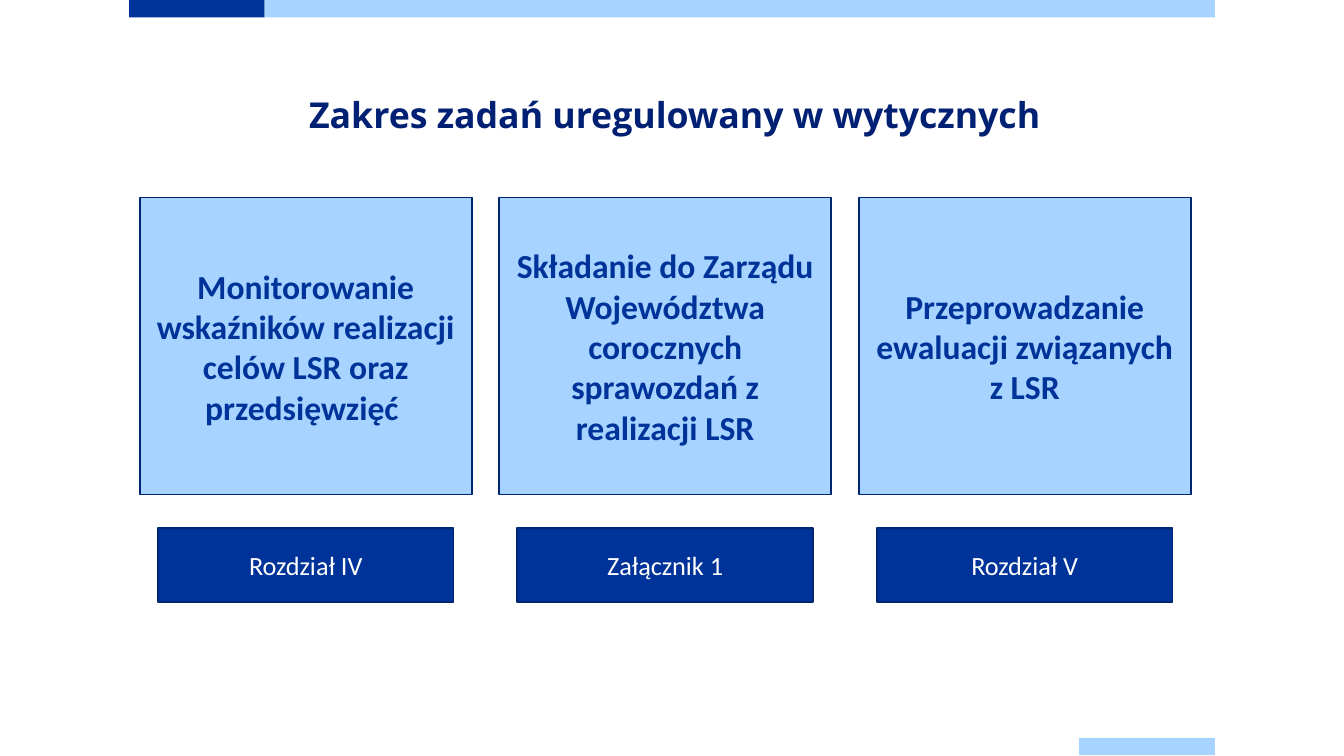
from pptx import Presentation
from pptx.dml.color import RGBColor
from pptx.enum.shapes import MSO_SHAPE
from pptx.enum.text import MSO_ANCHOR, PP_ALIGN
from pptx.util import Inches, Pt

NAVY = RGBColor(0x00, 0x20, 0x73)
EDGE = RGBColor(0x00, 0x26, 0x71)
BLUE = RGBColor(0x00, 0x33, 0x99)
SKY = RGBColor(0xA6, 0xD3, 0xFF)
WHITE = RGBColor(0xFF, 0xFF, 0xFF)

TASKS = [
    ("Monitorowanie wskaźników realizacji celów LSR oraz przedsięwzięć ", "Rozdział IV"),
    ("Składanie do Zarządu Województwa corocznych sprawozdań z realizacji LSR", "Załącznik 1"),
    ("Przeprowadzanie ewaluacji związanych z LSR", "Rozdział V"),
]


def write(frame, text, size, color, font="Calibri", bold=False,
          anchor=MSO_ANCHOR.MIDDLE, space=None):
    frame.word_wrap = True
    frame.vertical_anchor = anchor
    para = frame.paragraphs[0]
    para.alignment = PP_ALIGN.CENTER
    if space:
        para.line_spacing = Pt(space)
    run = para.add_run()
    run.text = text
    run.font.name = font
    run.font.size = Pt(size)
    run.font.bold = bold
    run.font.color.rgb = color


class Deck:
    def __init__(self, slide):
        self.slide = slide

    def title(self, text, x, y, w, h):
        shape = self.slide.shapes.title
        shape.left, shape.top = Inches(x), Inches(y)
        shape.width, shape.height = Inches(w), Inches(h)
        frame = shape.text_frame
        frame.margin_left = frame.margin_right = 0
        frame.margin_top = frame.margin_bottom = 0
        write(frame, text, 19.1, NAVY, font="Open Sans", bold=True,
              anchor=MSO_ANCHOR.TOP, space=24.5)

    def bar(self, x, y, w, h, fill):
        shape = self.slide.shapes.add_shape(
            MSO_SHAPE.RECTANGLE, Inches(x), Inches(y), Inches(w), Inches(h))
        shape.shadow.inherit = False
        shape.fill.solid()
        shape.fill.fore_color.rgb = fill
        shape.line.fill.background()
        return shape

    def box(self, text, x, y, w, h, fill, **style):
        shape = self.bar(x, y, w, h, fill)
        shape.line.color.rgb = EDGE
        shape.line.width = Pt(1)
        write(shape.text_frame, text, **style)


def main():
    # Widescreen page, 16:9
    prs = Presentation()
    prs.slide_width = Inches(10)
    prs.slide_height = prs.slide_width * 9 // 16
    deck = Deck(prs.slides.add_slide(prs.slide_layouts[5]))

    # Edge bars
    deck.bar(0.96, 0, 1.01, 0.13, BLUE)
    deck.bar(1.97, 0, 7.07, 0.13, SKY)
    deck.bar(8.03, 5.49, 1.01, 0.13, SKY)

    # Title
    deck.title("Zakres zadań uregulowany w wytycznych", 0.98, 0.67, 8.08, 0.8)

    # Each task with its chapter centred below
    left, last, wide, slim = 1.04, 6.39, 2.47, 2.2
    step = (last - left) / (len(TASKS) - 1)
    for i, (task, part) in enumerate(TASKS):
        x = left + i * step
        deck.box(task, x, 1.47, wide, 2.21, SKY, size=18, color=BLUE, bold=True)
        deck.box(part, x + (wide - slim) / 2, 3.93, slim, 0.55, BLUE,
                 size=14.1, color=WHITE)

    prs.save("out.pptx")


if __name__ == "__main__":
    main()
